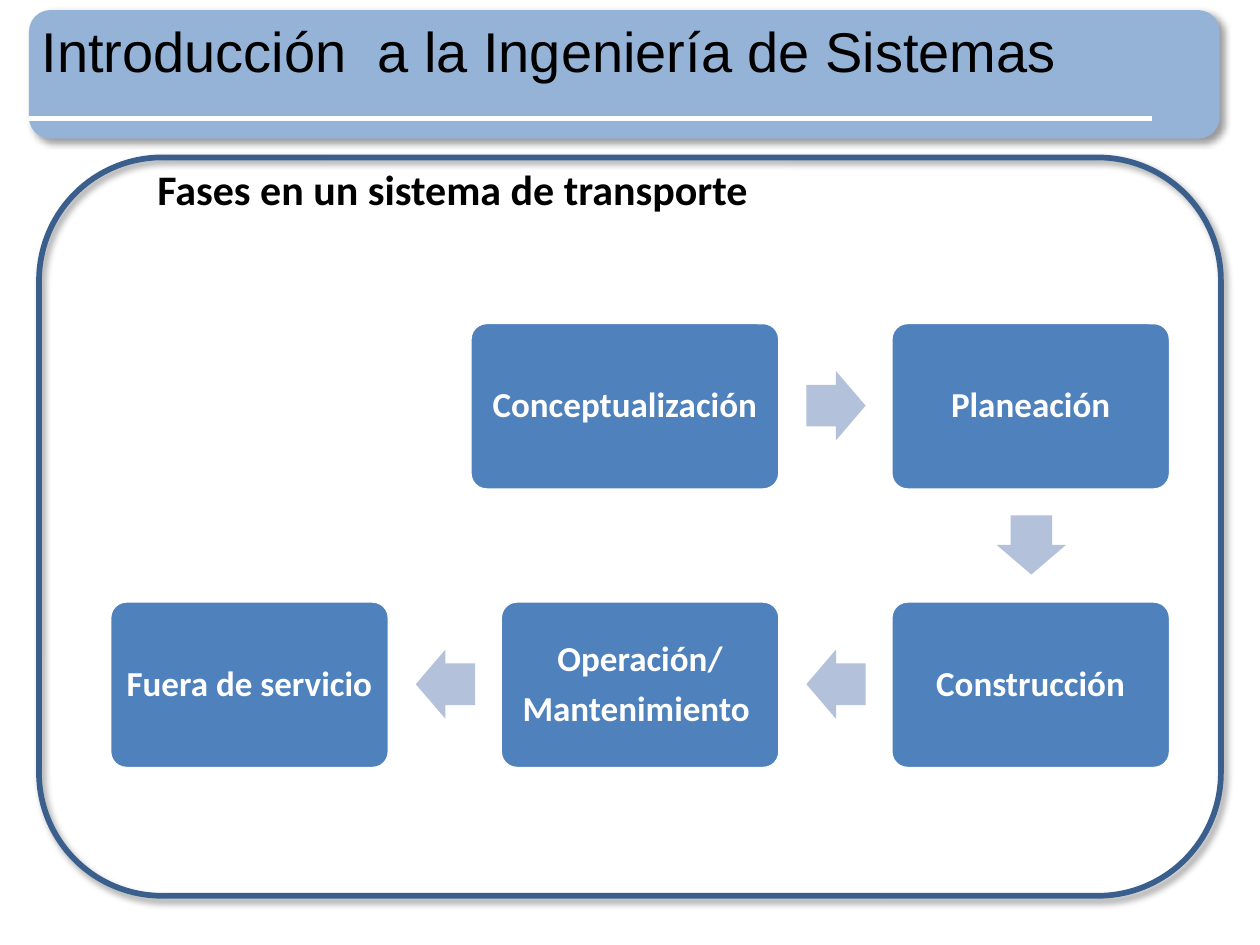
from itertools import pairwise
from lxml.etree import SubElement
from pptx import Presentation
from pptx.dml.color import RGBColor
from pptx.enum.shapes import MSO_CONNECTOR, MSO_SHAPE
from pptx.enum.text import MSO_ANCHOR, PP_ALIGN
from pptx.oxml import parse_xml
from pptx.oxml.ns import nsdecls, qn
from pptx.util import Inches, Pt

SHADOW = (
    f'<a:effectLst {nsdecls("a")}><a:outerShdw blurRad="50800" dist="38100" '
    'dir="2700000" algn="tl" rotWithShape="0"><a:srgbClr val="000000">'
    '<a:alpha val="40000"/></a:srgbClr></a:outerShdw></a:effectLst>'
)


def color(code):
    return RGBColor.from_string(code)


def space(par, tag, percent):
    gap = SubElement(par._p.get_or_add_pPr(), qn(tag))
    SubElement(gap, qn("a:spcPct"), val=str(percent * 1000))


def write(shape, text, size, font="Calibri", fill="000000", bold=False,
          align=PP_ALIGN.LEFT, anchor=MSO_ANCHOR.TOP, inset=(0.1, 0.05),
          lines=None, before=0, after=0):
    frame = shape.text_frame
    frame.word_wrap = True
    frame.vertical_anchor = anchor
    frame.margin_left = frame.margin_right = Inches(inset[0])
    frame.margin_top = frame.margin_bottom = Inches(inset[1])
    frame.text = text
    for par in frame.paragraphs:
        par.alignment = align
        if lines:
            par.line_spacing = lines
        space(par, "a:spcBef", before)
        space(par, "a:spcAft", after)
        for run in par.runs:
            run.font.name = font
            run.font.size = Pt(size)
            run.font.bold = bold
            run.font.color.rgb = color(fill)


def draw(slide, kind, box, fill=None, line=None, width=1, adjust=(), shadow=False):
    shape = slide.shapes.add_shape(kind, *map(Inches, box))
    for index, value in enumerate(adjust):
        shape.adjustments[index] = value
    if fill:
        shape.fill.solid()
        shape.fill.fore_color.rgb = color(fill)
    else:
        shape.fill.background()
    if line:
        shape.line.color.rgb = color(line)
        shape.line.width = Pt(width)
    else:
        shape.line.fill.background()
    if shadow:
        shape._element.spPr.append(parse_xml(SHADOW))
    else:
        shape.shadow.inherit = False
    return shape


def banner(slide, box, text):
    left, top, width, height = box
    draw(slide, MSO_SHAPE.ROUNDED_RECTANGLE, box, fill="95B3D7", shadow=True)
    level = Inches(top + 0.86)
    rule = slide.shapes.add_connector(
        MSO_CONNECTOR.STRAIGHT, Inches(left), level, Inches(left + width - 0.54), level)
    rule.line.color.rgb = color("FFFFFF")
    rule.line.width = Pt(3.25)
    SubElement(rule._element.spPr, qn("a:effectLst"))
    title = slide.shapes.title
    title.left, title.top = Inches(left), Inches(top)
    title.width, title.height = Inches(8.54), Inches(height)
    write(title, text, 32, font="Arial", before=20)
    slide.shapes._spTree.append(title._element)


def panel(slide, box, text):
    left, top, width, height = box
    draw(slide, MSO_SHAPE.ROUNDED_RECTANGLE, box, line="3A5F8C", width=3.25, shadow=True)
    head = slide.shapes.add_textbox(
        Inches(left + 0.84), Inches(top), Inches(width - 0.84), Inches(0.6))
    write(head, text, 24, bold=True, before=20)


def flow(slide, box, steps):
    left, top, width, height = box
    wide, high = 2.22, 1.33
    across, down = (width - wide) / 2, height - high
    for text, col, row, extra in steps:
        node = draw(slide, MSO_SHAPE.ROUNDED_RECTANGLE,
                    (left + col * across - extra, top + row * down, wide + extra, high),
                    fill="4F81BD", line="FFFFFF", width=2, adjust=(0.1,))
        write(node, text, 20, fill="FFFFFF", bold=True, align=PP_ALIGN.CENTER,
              anchor=MSO_ANCHOR.MIDDLE, inset=(0.07, 0.08), lines=0.9, after=35)
    for (_, col, row, _), (_, far, low, _) in pairwise(steps):
        mid = left + (col + far) / 2 * across + wide / 2
        level = top + (row + low) / 2 * down + high / 2
        arrow = draw(slide, MSO_SHAPE.RIGHT_ARROW, (mid - 0.23, level - 0.28, 0.47, 0.55),
                     fill="B3C1DB", adjust=(0.6, 0.5))
        arrow.rotation = 90 if low > row else 180 if far < col else 0


def main():
    deck = Presentation()
    deck.slide_width, deck.slide_height = Inches(10), Inches(7.5)
    slide = deck.slides.add_slide(deck.slide_layouts[5])
    panel(slide, (0.31, 1.25, 9.38, 5.86), "Fases en un sistema de transporte")
    banner(slide, (0.23, 0.08, 9.45, 1.02), "Introducción  a la Ingeniería de Sistemas")
    flow(slide, (0.87, 2.56, 8.42, 3.54), [
        ("Conceptualización", 1, 0, 0.24),
        ("Planeación", 2, 0, 0),
        ("Construcción", 2, 1, 0),
        ("Operación/\nMantenimiento ", 1, 1, 0),
        ("Fuera de servicio", 0, 1, 0),
    ])
    deck.save("out.pptx")


if __name__ == "__main__":
    main()
